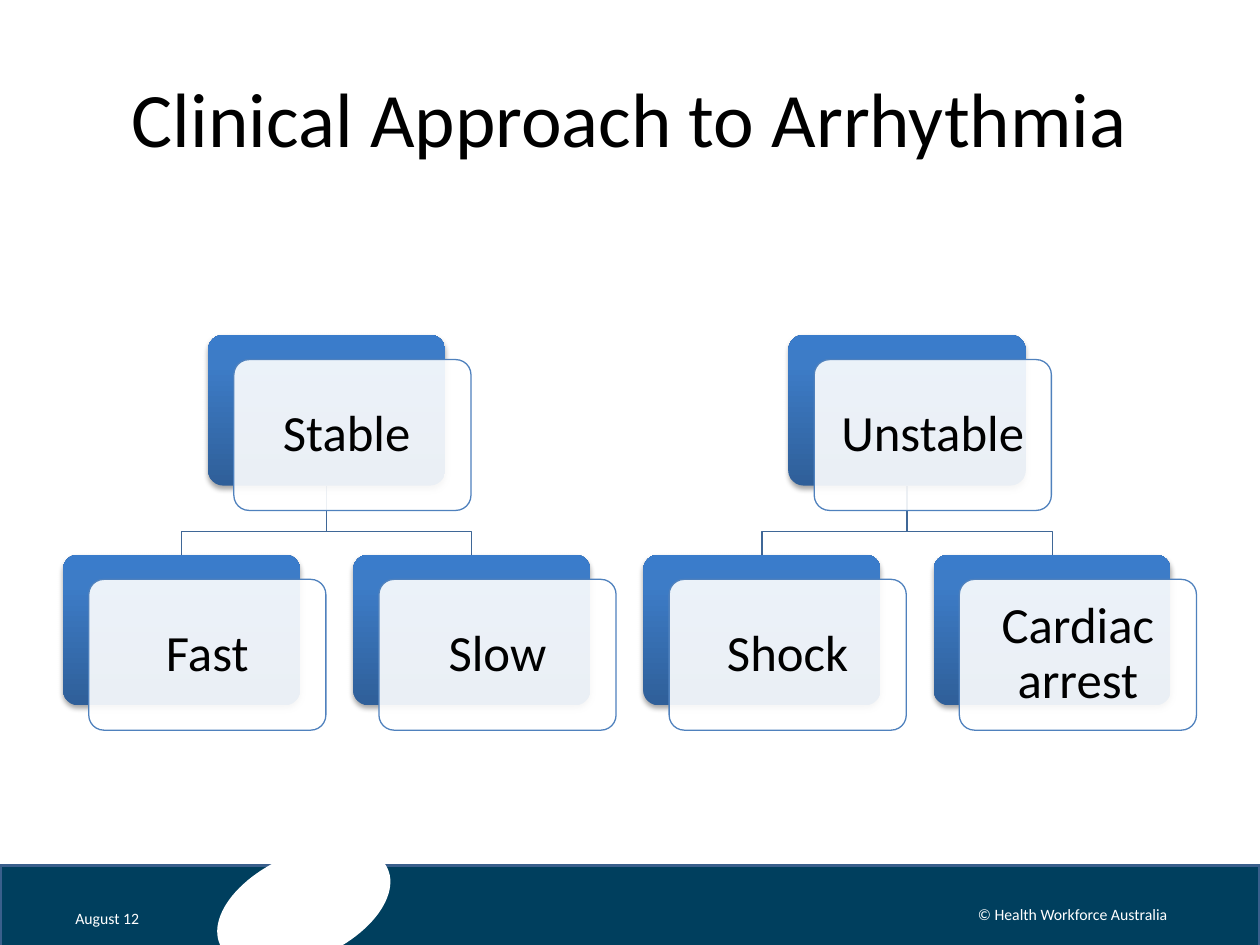
from copy import deepcopy

from lxml.etree import SubElement
from pptx import Presentation
from pptx.dml.color import RGBColor as RGB
from pptx.enum.shapes import MSO_SHAPE as Form
from pptx.enum.text import MSO_ANCHOR as Anchor, PP_ALIGN as Align
from pptx.oxml.ns import qn
from pptx.util import Cm, Pt

INK = {"text": "000000", "paper": "FFFFFF", "band": "003F5E", "rim": "3A5F8C",
       "link": "3F6797", "edge": "4F81BD", "shade": "000000"}
BLUES = [(0, "2F5F99"), (0.8, "3D7CC7"), (1, "3A7CCB")]
LABEL = {"size": Pt(29), "name": "Calibri"}
SMALL = {"size": Pt(9), "name": "Calibri"}
HEAD = {"size": Pt(44), "name": "Calibri"}
TREES = [("Stable ", ["Fast", "Slow"]), ("Unstable", ["Shock", "Cardiac arrest"])]
WIDE, HIGH, STEP, DROP = 4.78, 3.04, 5.85, 4.43


def paint(shape, fill=None, line=None, width=0.75):
    """Set a plain fill and line, and drop the shadow."""
    shape.shadow.inherit = False
    if fill:
        shape.fill.solid()
        shape.fill.fore_color.rgb = RGB.from_string(INK[fill])
    else:
        shape.fill.background()
    if line:
        shape.line.color.rgb = RGB.from_string(INK[line])
        shape.line.width = Pt(width)
    else:
        shape.line.fill.background()
    return shape


def block(slide, form, box):
    """Add a preset shape in a box given in centimetres."""
    shape = slide.shapes.add_shape(form, *map(Cm, box))
    if form == Form.ROUNDED_RECTANGLE:
        shape.adjustments[0] = 0.1
    return shape


def write(frame, text, look, ink, align=Align.CENTER):
    """Put one formatted paragraph in a text frame."""
    frame.word_wrap = True
    frame.vertical_anchor = Anchor.MIDDLE
    para = frame.paragraphs[0]
    para.alignment = align
    run = para.add_run()
    run.text = text
    for key, value in look.items():
        setattr(run.font, key, value)
    run.font.color.rgb = RGB.from_string(INK[ink])
    return para


def shade(shape):
    """Give a shape the blue gradient and a soft shadow below."""
    fill = shape.fill
    fill.gradient()
    fill.gradient_angle = 90
    stops = shape.element.spPr.find(".//" + qn("a:gsLst"))
    stops.append(deepcopy(stops[0]))
    for stop, (place, tone) in zip(fill.gradient_stops, BLUES):
        stop.position = place
        stop.color.rgb = RGB.from_string(tone)
    glow = SubElement(shape.element.spPr.find(qn("a:effectLst")), qn("a:outerShdw"),
                      blurRad=str(Pt(3.1)), dist=str(Pt(1.8)), dir="5400000",
                      rotWithShape="0")
    tone = SubElement(glow, qn("a:srgbClr"), val=INK["shade"])
    SubElement(tone, qn("a:alpha"), val="35000")


def card(slide, left, top, text):
    """Draw a blue card with a clear labelled card in front."""
    form = Form.ROUNDED_RECTANGLE
    shade(paint(block(slide, form, (left, top, WIDE, HIGH)), "edge"))
    left, top = left + 0.52, top + 0.5
    front = paint(block(slide, form, (left, top, WIDE, HIGH)), "paper", "edge")
    tone = front.element.spPr.find(qn("a:solidFill"))[0]
    SubElement(tone, qn("a:alpha"), val="90000")
    box = (left + 0.09, top + 0.09, WIDE - 0.18, HIGH - 0.18)
    frame = slide.shapes.add_textbox(*map(Cm, box)).text_frame
    for side in ("left", "right", "top", "bottom"):
        setattr(frame, "margin_" + side, Cm(0.3))
    write(frame, text, LABEL, "text").line_spacing = 0.9


def link(slide, start, end):
    """Draw an elbow line from a root down to a leaf."""
    bend = end[1] - 0.46
    points = [start, (start[0], bend), (end[0], bend), end]
    first, *rest = [(Cm(x), Cm(y)) for x, y in points]
    pen = slide.shapes.build_freeform(*first)
    pen.add_line_segments(rest, close=False)
    paint(pen.convert_to_shape(), line="link")


def tree(slide, left, top, root, leaves):
    """Place a root card centred over its row of leaves."""
    spots = [left + i * STEP for i in range(len(leaves))]
    mid = (spots[0] + spots[-1]) / 2
    for spot in spots:
        link(slide, (mid + WIDE / 2, top + HIGH), (spot + WIDE / 2, top + DROP))
    card(slide, mid, top, root)
    for spot, leaf in zip(spots, leaves):
        card(slide, spot, top + DROP, leaf)


def footer(slide, left, top, width, height):
    """Draw the bottom band with its oval, date and owner."""
    paint(block(slide, Form.RECTANGLE, (left, top, width, height)), "band", "rim", 2)
    oval = block(slide, Form.OVAL, (left + 4.27, top - 0.23, 3.71, 2.11))
    paint(oval, "paper").rotation = 335.7
    notes = [("August 12", (1.27, 0.69, 2.03, 0.74), Align.LEFT),
             ("© Health Workforce Australia", (18.9, 0.48, 5.44, 1.02), Align.CENTER)]
    for text, (x, y, w, h), align in notes:
        box = slide.shapes.add_textbox(Cm(left + x), Cm(top + y), Cm(w), Cm(h))
        write(box.text_frame, text, SMALL, "paper", align)


def title(slide, left, top, width, height):
    """Place and fill the title placeholder."""
    head = slide.shapes.title
    spot = {"left": left, "top": top, "width": width, "height": height}
    for key, value in spot.items():
        setattr(head, key, Cm(value))
    write(head.text_frame, "Clinical Approach to Arrhythmia", HEAD, "text")


def main():
    """Build and save the slide."""
    deck = Presentation()
    deck.slide_width, deck.slide_height = Cm(25.4), Cm(19.05)
    slide = deck.slides.add_slide(deck.slide_layouts[5])
    footer(slide, 0, 17.45, 25.4, 1.65)
    title(slide, 1.27, 0.76, 22.86, 3.18)
    for i, (root, leaves) in enumerate(TREES):
        tree(slide, 1.27 + 2 * i * STEP, 6.75, root, leaves)
    deck.save("out.pptx")


if __name__ == "__main__":
    main()
